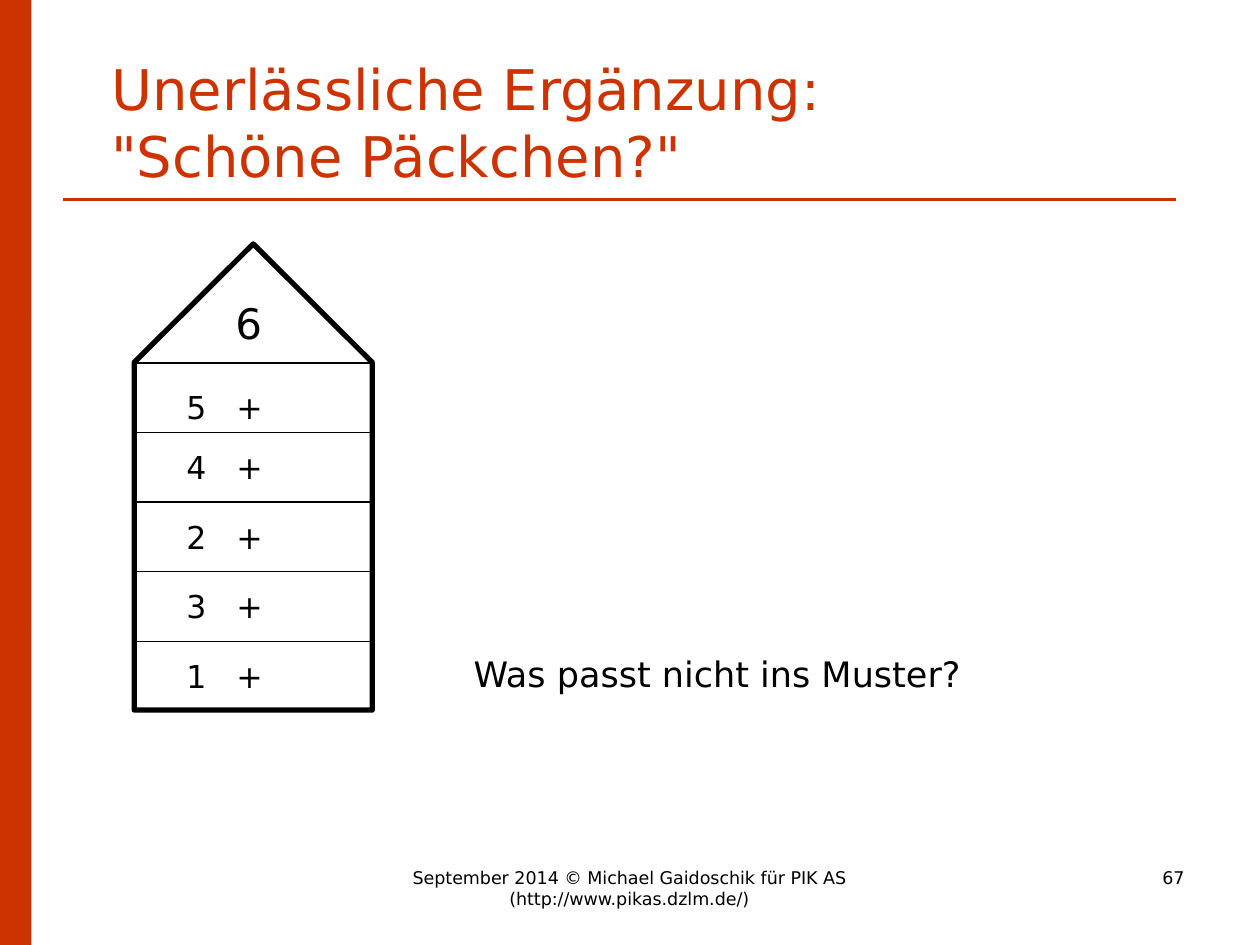
from lxml import etree
from pptx import Presentation
from pptx.dml.color import RGBColor
from pptx.enum.shapes import MSO_CONNECTOR, MSO_SHAPE
from pptx.enum.text import MSO_ANCHOR, PP_ALIGN
from pptx.oxml.ns import qn
from pptx.util import Pt

STRAIGHT = MSO_CONNECTOR.STRAIGHT
RECTANGLE, PENTAGON = MSO_SHAPE.RECTANGLE, MSO_SHAPE.PENTAGON
TOP, BOTTOM = MSO_ANCHOR.TOP, MSO_ANCHOR.BOTTOM
LEFT, CENTER, RIGHT = PP_ALIGN.LEFT, PP_ALIGN.CENTER, PP_ALIGN.RIGHT

RED = RGBColor(0xCC, 0x33, 0x00)
BLACK = RGBColor(0x00, 0x00, 0x00)
FONT = "DejaVu Sans"

prs = Presentation()
prs.slide_width, prs.slide_height = Pt(720), Pt(540)
slide = prs.slides.add_slide(prs.slide_layouts[6])


def add_text(text, left, top, width, height, size, color=BLACK,
             align=LEFT, anchor=TOP, indent=7.2, tab=None):
    """Add a text box; indent is its left margin, tab an optional tab stop."""
    box = slide.shapes.add_textbox(Pt(left), Pt(top), Pt(width), Pt(height))
    frame = box.text_frame
    frame.word_wrap = True
    frame.vertical_anchor = anchor
    frame.margin_left = Pt(indent)
    frame.text = text
    paragraph = frame.paragraphs[0]
    paragraph.alignment = align
    if tab:
        tab_list = etree.SubElement(paragraph._p.get_or_add_pPr(), qn("a:tabLst"))
        etree.SubElement(tab_list, qn("a:tab"), pos=str(Pt(tab)), algn="l")
    for run in paragraph.runs:
        run.font.name = FONT
        run.font.size = Pt(size)
        run.font.color.rgb = color


def add_rule(left, right, y, color, weight):
    """Add a horizontal line."""
    rule = slide.shapes.add_connector(STRAIGHT, Pt(left), Pt(y), Pt(right), Pt(y))
    rule.line.color.rgb = color
    rule.line.width = Pt(weight)
    etree.SubElement(rule._element.spPr, qn("a:effectLst"))


# Side bar and title
for part in range(3):
    bar = slide.shapes.add_shape(RECTANGLE, 0, Pt(180 * part), Pt(18), Pt(180))
    bar.shadow.inherit = False
    bar.fill.solid()
    bar.fill.fore_color.rgb = RED
    bar.line.fill.background()

add_rule(36, 672, 114, RED, 1.5)
add_text('Unerlässliche Ergänzung:\v"Schöne Päckchen?"', 36, 21.6, 648, 90, 32,
         color=RED, anchor=BOTTOM, indent=27.5)

# Number house: a pentagon turned to point upwards
house = slide.shapes.add_shape(PENTAGON, Pt(11.5), Pt(204.5), Pt(266.4), Pt(136.1))
house.rotation = 270
house.adjustments[0] = 0.498
house.shadow.inherit = False
house.fill.background()
house.line.color.rgb = BLACK
house.line.width = Pt(3)

# Floors
FIRST_FLOOR, FLOOR_HEIGHT = 207.4, 39.75
summands = [5, 4, 2, 3, 1]
for floor in range(len(summands) + 1):
    add_rule(76.3, 212.4, FIRST_FLOOR + floor * FLOOR_HEIGHT, BLACK, 0.75)

add_text("6", 127.4, 166.3, 29.7, 36, 24)
for floor, summand in enumerate(summands):
    text_offset = 10.8 if floor == 0 else 5.4
    add_text(f"{summand}\t+", 99.4, FIRST_FLOOR + floor * FLOOR_HEIGHT + text_offset,
             70, 29, 18, tab=28.6)

add_text("Was passt nicht ins Muster?", 263.5, 369.4, 300, 31, 20)

# Footer
add_text("September 2014 © Michael Gaidoschik für PIK AS (http://www.pikas.dzlm.de/)",
         206.6, 491.8, 306, 36, 10, align=CENTER)
add_text("67", 516.2, 491.8, 167.8, 36, 10, align=RIGHT)

prs.save("out.pptx")
